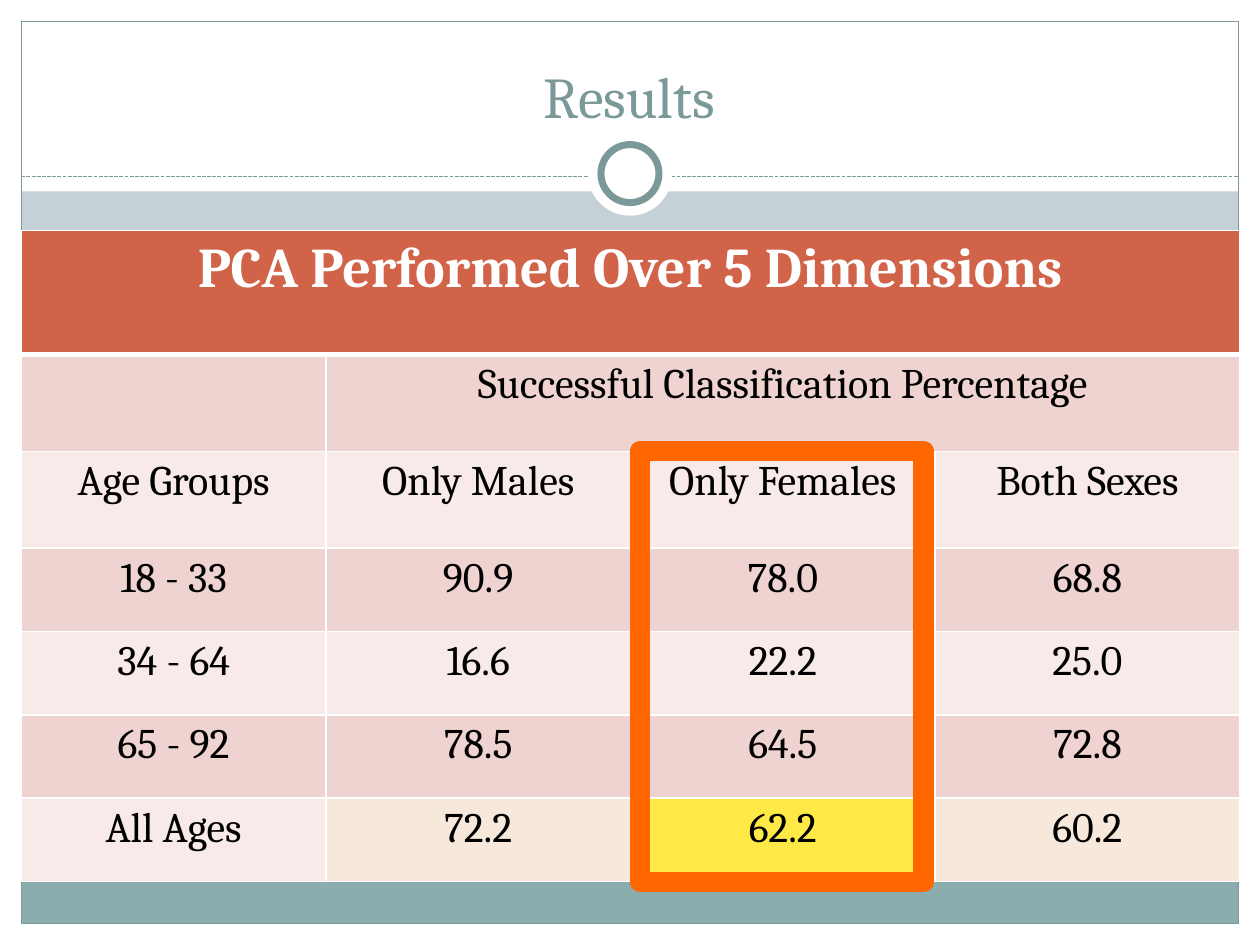
import dataclasses

import pptx
import pptx.dml.color
import pptx.enum.dml
import pptx.enum.shapes
import pptx.enum.text
import pptx.oxml
import pptx.oxml.ns
import pptx.util

Cm = pptx.util.Cm
Pt = pptx.util.Pt
ShapeKind = pptx.enum.shapes.MSO_SHAPE


@dataclasses.dataclass(frozen=True)
class Theme:
    font: str = "Cambria"
    title_size: float = 33
    heading_size: float = 32
    cell_size: float = 24
    background: str = "C5D1D7"
    white: str = "FFFFFF"
    black: str = "000000"
    teal: str = "7C999A"
    footer: str = "8CADAE"
    heading: str = "D16349"
    dark_band: str = "EED3D0"
    light_band: str = "F7EAE9"
    total: str = "F6E9DB"
    best_total: str = "FFE947"
    highlight: str = "FF6600"


def rgb(color):
    return pptx.dml.color.RGBColor.from_string(color)


class SlideBuilder:
    def __init__(self, slide, theme):
        self.slide = slide
        self.theme = theme
        slide.background.fill.solid()
        slide.background.fill.fore_color.rgb = rgb(theme.background)

    def add_text(self, text_frame, text, size, color, bold=False):
        paragraph = text_frame.paragraphs[0]
        paragraph.alignment = pptx.enum.text.PP_ALIGN.CENTER
        run = paragraph.add_run()
        run.text = text
        run.font.name = self.theme.font
        run.font.size = Pt(size)
        run.font.bold = bold
        run.font.color.rgb = rgb(color)

    def title(self, text, left, top, width, height):
        """Fill the title placeholder and raise it above the shapes drawn so far."""
        title = self.slide.shapes.title
        title.left, title.top, title.width, title.height = map(Cm, (left, top, width, height))
        title.text_frame.auto_size = pptx.enum.text.MSO_AUTO_SIZE.NONE
        title.text_frame.vertical_anchor = pptx.enum.text.MSO_ANCHOR.BOTTOM
        self.add_text(title.text_frame, text, self.theme.title_size, self.theme.teal)
        title.element.getparent().append(title.element)

    def shape(self, kind, left, top, width, height, fill=None, line=None, line_width=0.75):
        shape = self.slide.shapes.add_shape(kind, *map(Cm, (left, top, width, height)))
        shape.shadow.inherit = False
        if fill:
            shape.fill.solid()
            shape.fill.fore_color.rgb = rgb(fill)
        else:
            shape.fill.background()
        if line:
            shape.line.color.rgb = rgb(line)
            shape.line.width = Pt(line_width)
        else:
            shape.line.fill.background()

    def circle(self, center_x, center_y, diameter, **style):
        radius = diameter / 2
        self.shape(ShapeKind.OVAL, center_x - radius, center_y - radius,
                   diameter, diameter, **style)

    def dashed_rule(self, left, right, y):
        rule = self.slide.shapes.add_connector(
            pptx.enum.shapes.MSO_CONNECTOR.STRAIGHT, Cm(left), Cm(y), Cm(right), Cm(y))
        rule.line.color.rgb = rgb(self.theme.teal)
        rule.line.width = Pt(0.75)
        rule.line.dash_style = pptx.enum.dml.MSO_LINE.SQUARE_DOT
        properties = rule.element.find(pptx.oxml.ns.qn("p:spPr"))
        properties.append(pptx.oxml.parse_xml(
            f'<a:effectLst {pptx.oxml.ns.nsdecls("a")}/>'))

    def table(self, rows, left, top, column_width, row_heights):
        column_count = len(rows[0])
        frame = self.slide.shapes.add_table(
            len(rows), column_count, Cm(left), Cm(top),
            Cm(column_width * column_count), Cm(sum(row_heights)))
        table = frame.table
        for column in table.columns:
            column.width = Cm(column_width)
        for row, height in zip(table.rows, row_heights):
            row.height = Cm(height)
        for row_index, texts in enumerate(rows):
            for column_index, text in enumerate(texts):
                self.cell(table.cell(row_index, column_index), text, row_index,
                          self.cell_fill(row_index, column_index, len(rows)))
        return table

    def cell_fill(self, row_index, column_index, row_count):
        theme = self.theme
        if row_index == 0:
            return theme.heading
        if row_index == row_count - 1 and column_index > 0:
            return theme.best_total if column_index == 2 else theme.total
        return theme.dark_band if row_index % 2 else theme.light_band

    def cell(self, cell, text, row_index, fill):
        theme = self.theme
        is_heading = row_index == 0
        self.cell_borders(cell, top=3 if row_index == 1 else 1, bottom=3 if is_heading else 1)
        cell.fill.solid()
        cell.fill.fore_color.rgb = rgb(fill)
        if text:
            self.add_text(cell.text_frame, text,
                          theme.heading_size if is_heading else theme.cell_size,
                          theme.white if is_heading else theme.black, is_heading)

    def cell_borders(self, cell, top, bottom):
        """Add white borders; they must come before the fill in the cell properties."""
        properties = cell._tc.get_or_add_tcPr()
        for side, width in (("L", 1), ("R", 1), ("T", top), ("B", bottom)):
            properties.append(pptx.oxml.parse_xml(
                f'<a:ln{side} {pptx.oxml.ns.nsdecls("a")} w="{Pt(width)}"><a:solidFill>'
                f'<a:srgbClr val="{self.theme.white}"/></a:solidFill></a:ln{side}>'))


def main():
    theme = Theme()
    presentation = pptx.Presentation()
    presentation.slide_width, presentation.slide_height = Cm(25.4), Cm(19.05)
    slide = presentation.slides.add_slide(presentation.slide_layouts[5])
    builder = SlideBuilder(slide, theme)

    width, height, margin = 25.4, 19.05, 0.43
    inner_width = width - 2 * margin
    for box in (
        (0, height - margin, width, margin),
        (0, 0, width, 3.86),
        (0, 0, margin, height),
        (width - margin, 0, margin, height),
    ):
        builder.shape(ShapeKind.RECTANGLE, *box, fill=theme.white)
    builder.shape(ShapeKind.RECTANGLE, margin, 17.75, inner_width, 0.87, fill=theme.footer)
    builder.shape(ShapeKind.RECTANGLE, margin, margin, inner_width, height - 2 * margin,
                  line=theme.teal)
    builder.dashed_rule(margin, width - margin, 3.56)
    builder.circle(width / 2, 3.5, 1.7, fill=theme.white)
    builder.circle(width / 2, 3.5, 1.17, fill=theme.white, line=theme.teal, line_width=4)
    builder.title("Results", 0.84, 0.64, 23.7, 2.11)

    results = [
        ("PCA Performed Over 5 Dimensions", "", "", ""),
        ("", "Successful Classification Percentage", "", ""),
        ("Age Groups", "Only Males", "Only Females", "Both Sexes"),
        ("18 - 33", "90.9", "78.0", "68.8"),
        ("34 - 64", "16.6", "22.2", "25.0"),
        ("65 - 92", "78.5", "64.5", "72.8"),
        ("All Ages", "72.2", "62.2", "60.2"),
    ]
    table = builder.table(results, margin, 4.65, 6.14, [2.5, 1.95, 1.95] + [1.68] * 4)
    table.cell(0, 0).merge(table.cell(0, 3))
    table.cell(1, 1).merge(table.cell(1, 3))

    builder.shape(ShapeKind.RECTANGLE, 12.9, 9.09, 5.72, 8.69,
                  line=theme.highlight, line_width=11.5)
    presentation.save("out.pptx")


if __name__ == "__main__":
    main()
